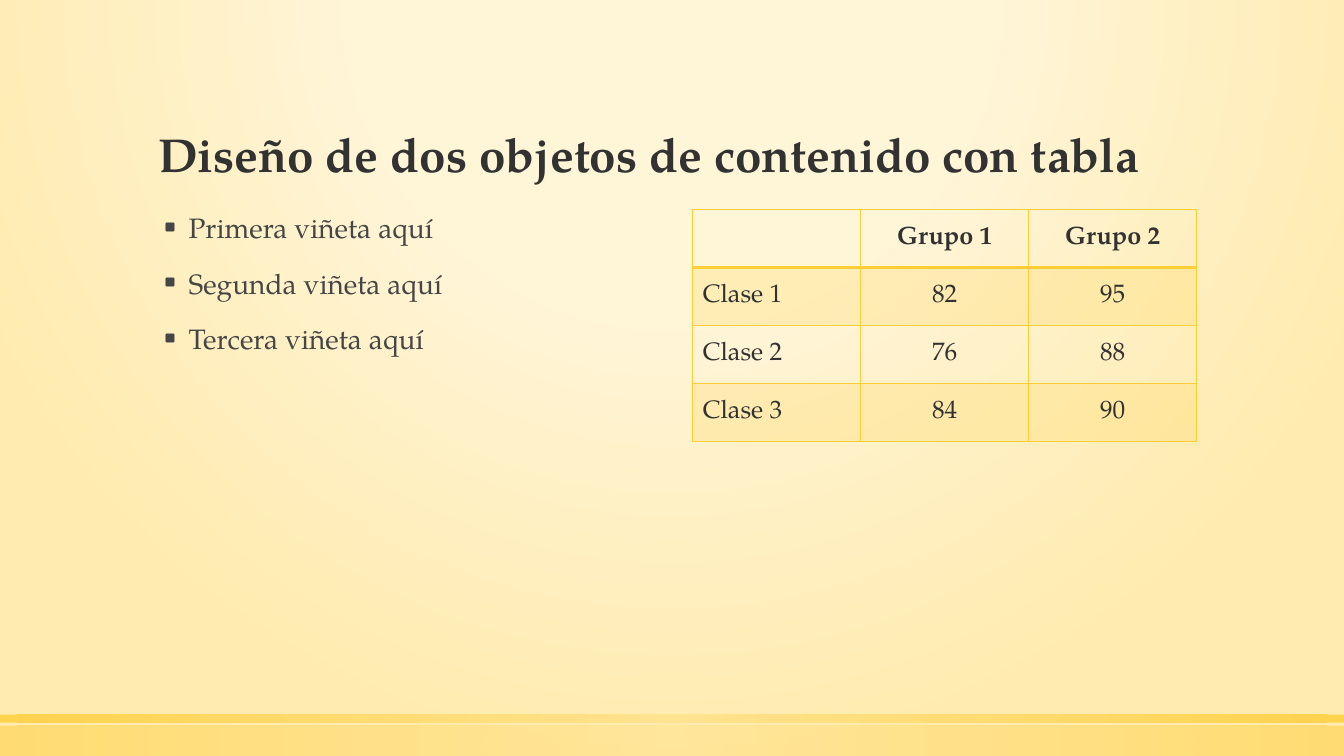
from lxml.etree import SubElement
from pptx import Presentation
from pptx.dml.color import RGBColor
from pptx.enum.shapes import MSO_SHAPE
from pptx.enum.text import MSO_ANCHOR, MSO_AUTO_SIZE, PP_ALIGN
from pptx.oxml import parse_xml
from pptx.oxml.ns import nsdecls, qn
from pptx.util import Inches, Pt

FONT = "TeX Gyre Pagella"
GOLD, PALE_GOLD = "FFCD36", "FFE186"
CREAM, SAND = "FFF5D7", "FFEBAF"
DARK, GRAY = "323232", "464646"
LEFT, CONTENT_TOP, COLUMN_WIDTH = 1.47, 2.08, 5
WIDTH, HEIGHT = 13.33, 7.5

BULLETS = ["Primera viñeta aquí", "Segunda viñeta aquí", "Tercera viñeta aquí"]
SCORES = [
    ["", "Grupo 1", "Grupo 2"],
    ["Clase 1", "82", "95"],
    ["Clase 2", "76", "88"],
    ["Clase 3", "84", "90"],
]


def color(value):
    return RGBColor.from_string(value)


def format_font(font, size, value, bold=False):
    font.name, font.size, font.bold = FONT, Pt(size), bold
    font.color.rgb = color(value)


def radial_gradient(stops, top=50, bottom=50):
    """Circular gradient fill; each stop is (position %, colour, opacity %)."""
    stop_xml = "".join(
        f'<a:gs pos="{position * 1000}"><a:srgbClr val="{value}">'
        f'<a:alpha val="{opacity * 1000}"/></a:srgbClr></a:gs>'
        for position, value, opacity in stops
    )
    return parse_xml(
        f'<a:gradFill {nsdecls("a")} rotWithShape="1"><a:gsLst>{stop_xml}</a:gsLst>'
        f'<a:path path="circle"><a:fillToRect l="50000" t="{top * 1000}" '
        f'r="50000" b="{bottom * 1000}"/></a:path></a:gradFill>'
    )


def replace_solid_fill(parent, gradient):
    parent.replace(parent.find(qn("a:solidFill")), gradient)


def set_background(slide):
    slide.background.fill.solid()
    properties = slide.element.find(".//" + qn("p:bgPr"))
    stops = [(0, CREAM, 59), (40, CREAM, 66), (100, SAND, 100)]
    replace_solid_fill(properties, radial_gradient(stops, -80, 180))


def add_bottom_bar(slide, top, height, opacity):
    bar = slide.shapes.add_shape(
        MSO_SHAPE.RECTANGLE, 0, Inches(top), Inches(WIDTH), Inches(height))
    bar.shadow.inherit = False
    bar.line.fill.background()
    bar.fill.solid()
    stops = [(0, PALE_GOLD, opacity), (100, GOLD, opacity)]
    replace_solid_fill(bar.element.spPr, radial_gradient(stops))


def place(placeholder, left, top, width, height, anchor):
    placeholder.left, placeholder.top = Inches(left), Inches(top)
    placeholder.width, placeholder.height = Inches(width), Inches(height)
    frame = placeholder.text_frame
    frame.word_wrap, frame.auto_size = True, MSO_AUTO_SIZE.NONE
    frame.vertical_anchor = anchor
    return frame


def fill_title(title, text):
    frame = place(title, LEFT, 0.51, 10.4, 1.35, MSO_ANCHOR.BOTTOM)
    frame.text = text
    heading = frame.paragraphs[0]
    heading.alignment, heading.line_spacing = PP_ALIGN.LEFT, 0.9
    format_font(heading.runs[0].font, 34, DARK, bold=True)


def fill_bullets(body, items):
    frame = place(body, LEFT, CONTENT_TOP, COLUMN_WIDTH, 4.51, MSO_ANCHOR.TOP)
    frame.text = "\n".join(items)
    for index, item in enumerate(frame.paragraphs):
        item.line_spacing = 0.9
        item.space_before = Pt(18 if index else 0)
        properties = item._p.get_or_add_pPr()
        properties.set("marL", str(Inches(0.3)))
        properties.set("indent", str(Inches(-0.25)))
        SubElement(properties, qn("a:buFont"), typeface=FONT)
        SubElement(properties, qn("a:buChar"), char="▪")
        format_font(item.runs[0].font, 20, GRAY)


def set_borders(cell, bottom_width):
    properties = cell._tc.get_or_add_tcPr()
    widths = {"L": 1, "R": 1, "T": 1, "B": bottom_width}
    for index, (side, width) in enumerate(widths.items()):
        properties.insert(index, parse_xml(
            f'<a:ln{side} {nsdecls("a")} w="{Pt(width)}"><a:solidFill>'
            f'<a:srgbClr val="{GOLD}"/></a:solidFill></a:ln{side}>'))


def fill_cell(cell, text, row, column):
    cell.text = text
    cell.vertical_anchor = MSO_ANCHOR.MIDDLE
    label = cell.text_frame.paragraphs[0]
    label.alignment = PP_ALIGN.CENTER if column else PP_ALIGN.LEFT
    format_font(label.font, 18, DARK, bold=row == 0)
    for run in label.runs:
        format_font(run.font, 18, DARK, bold=row == 0)
    if row % 2:
        cell.fill.solid()
        cell.fill.fore_color.rgb = color(GOLD)
        tint = cell._tc.tcPr.find(".//" + qn("a:srgbClr"))
        SubElement(tint, qn("a:alpha"), val="20000")
    else:
        cell.fill.background()
    set_borders(cell, 1 if row else 2)


def add_score_table(slide, scores):
    table = slide.shapes.add_table(
        len(scores), len(scores[0]), Inches(6.87), Inches(CONTENT_TOP),
        Inches(COLUMN_WIDTH), Inches(2.3)).table
    table.first_row = table.horz_banding = False
    for row, values in enumerate(scores):
        for column, text in enumerate(values):
            fill_cell(table.cell(row, column), text, row, column)
    for row in range(1, len(scores[0])):
        top_line = table.cell(1, row - 1)._tc.tcPr.find(qn("a:lnT"))
        top_line.set("w", str(Pt(2)))
    table.cell(1, len(scores[0]) - 1)._tc.tcPr.find(qn("a:lnT")).set("w", str(Pt(2)))


def main():
    presentation = Presentation()
    presentation.slide_width = Inches(WIDTH)
    presentation.slide_height = Inches(HEIGHT)
    slide = presentation.slides.add_slide(presentation.slide_layouts[1])
    set_background(slide)
    add_bottom_bar(slide, 7.2, 0.3, opacity=50)
    add_bottom_bar(slide, 7.09, 0.08, opacity=80)
    fill_title(slide.shapes.title, "Diseño de dos objetos de contenido con tabla")
    fill_bullets(slide.placeholders[1], BULLETS)
    add_score_table(slide, SCORES)
    presentation.save("out.pptx")


if __name__ == "__main__":
    main()
